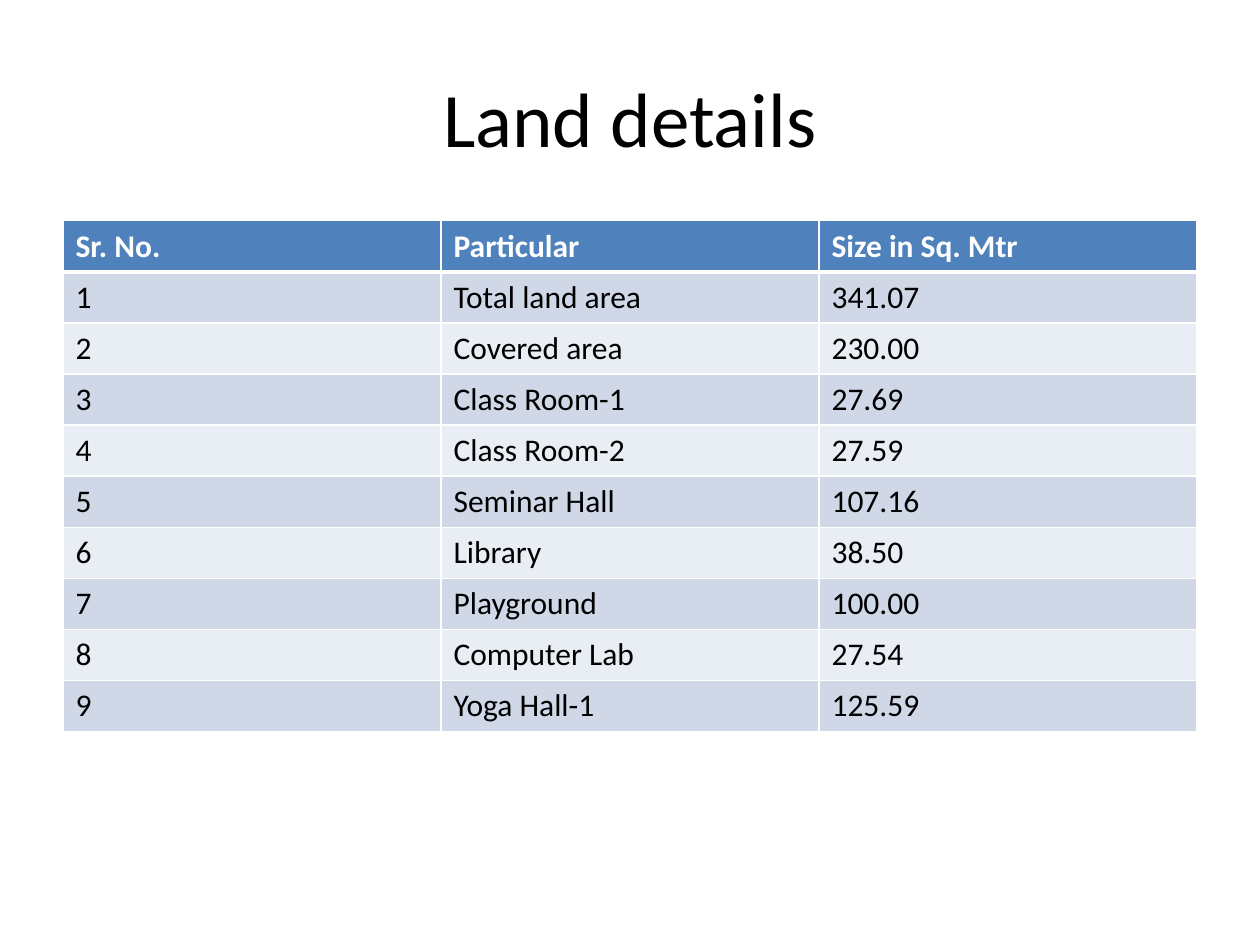
import pptx
import pptx.dml.color
import pptx.enum.text
import pptx.oxml.ns
import pptx.util
from lxml import etree

Cm = pptx.util.Cm
Pt = pptx.util.Pt
ALIGN = pptx.enum.text.PP_ALIGN
ANCHOR = pptx.enum.text.MSO_ANCHOR

# Content
TITLE = "Land details"
HEADINGS = ("Sr. No.", "Particular", "Size in Sq. Mtr")
AREAS = [
    ("Total land area", "341.07"),
    ("Covered area", "230.00"),
    ("Class Room-1", "27.69"),
    ("Class Room-2", "27.59"),
    ("Seminar Hall", "107.16"),
    ("Library", "38.50"),
    ("Playground", "100.00"),
    ("Computer Lab", "27.54"),
    ("Yoga Hall-1", "125.59"),
]

# Look
FONT = "Calibri"
BLACK, WHITE = "000000", "FFFFFF"
HEADER_FILL = "4F81BD"
BAND_FILLS = ("D0D8E8", "E9EDF4")
MARGIN, CONTENT_WIDTH = 1.27, 22.86
TABLE_TOP, ROW_HEIGHT = 4.45, 1.03


def color(hex_text):
    return pptx.dml.color.RGBColor.from_string(hex_text)


def write(frame, text, size=18, ink=BLACK, bold=False, align=ALIGN.LEFT):
    paragraph = frame.paragraphs[0]
    paragraph.alignment = align
    run = paragraph.add_run()
    run.text = text
    run.font.name = FONT
    run.font.size = Pt(size)
    run.font.bold = bold
    run.font.color.rgb = color(ink)


def add_borders(cell, **widths):
    """Draw white cell borders; widths are points by side (L, R, T, B)."""
    properties = cell._tc.get_or_add_tcPr()
    qn = pptx.oxml.ns.qn
    for side in "LRTB":
        line = etree.SubElement(properties, qn(f"a:ln{side}"),
                                w=str(Pt(widths.get(side, 1))))
        fill = etree.SubElement(line, qn("a:solidFill"))
        etree.SubElement(fill, qn("a:srgbClr"), val=WHITE)


deck = pptx.Presentation()
deck.slide_width, deck.slide_height = Cm(25.4), Cm(19.05)
slide = deck.slides.add_slide(deck.slide_layouts[6])

# Title
title = slide.shapes.add_textbox(Cm(MARGIN), Cm(0.76), Cm(CONTENT_WIDTH), Cm(3.18))
title.text_frame.word_wrap = True
title.text_frame.vertical_anchor = ANCHOR.MIDDLE
write(title.text_frame, TITLE, size=44, align=ALIGN.CENTER)

# Land table: numbered rows under the header
rows = [HEADINGS] + [(str(n), *area) for n, area in enumerate(AREAS, 1)]
land = slide.shapes.add_table(
    len(rows), len(HEADINGS), Cm(MARGIN), Cm(TABLE_TOP),
    Cm(CONTENT_WIDTH), Cm(ROW_HEIGHT * len(rows))).table

for r, row in enumerate(rows):
    header = r == 0
    land.rows[r].height = Cm(ROW_HEIGHT)
    for c, text in enumerate(row):
        cell = land.cell(r, c)
        # The rule between the header and the first row is thicker
        add_borders(cell, B=3 if header else 1, T=3 if r == 1 else 1)
        cell.fill.solid()
        cell.fill.fore_color.rgb = color(
            HEADER_FILL if header else BAND_FILLS[(r - 1) % 2])
        write(cell.text_frame, text, ink=WHITE if header else BLACK, bold=header)

deck.save("out.pptx")
